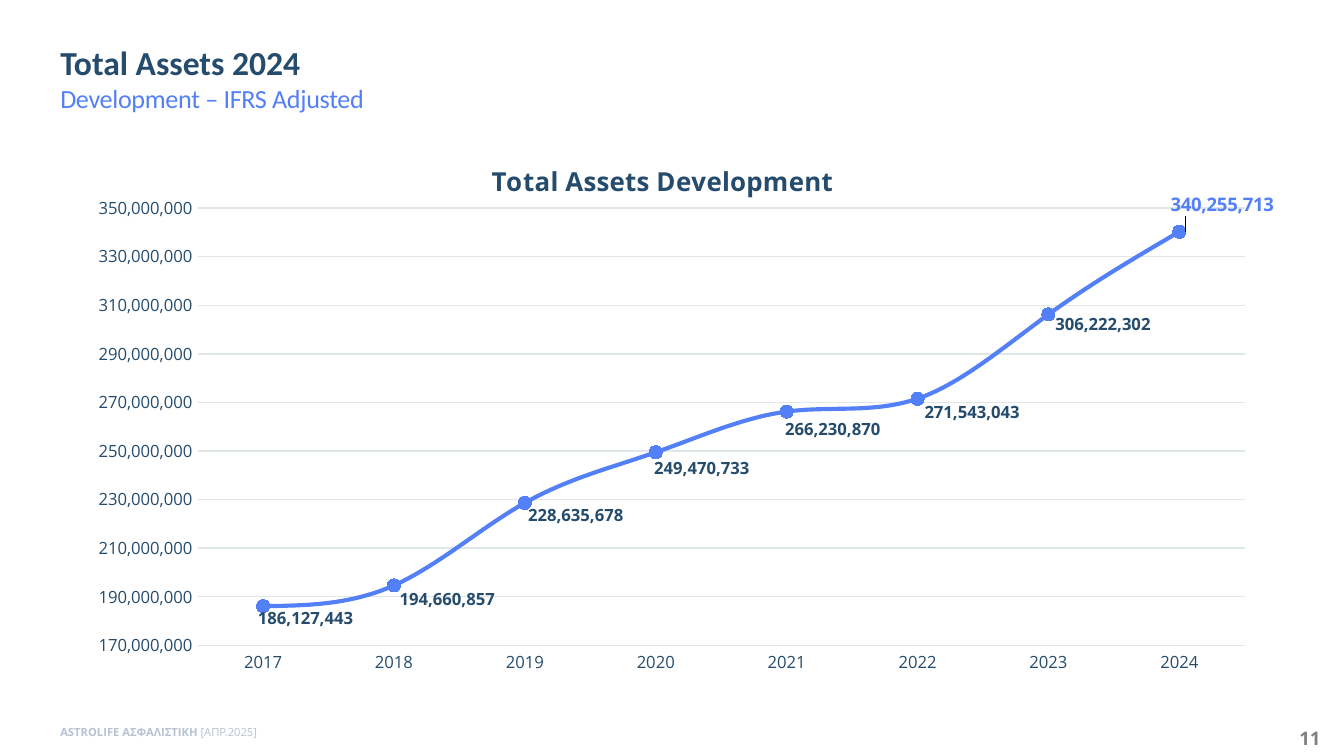
"""Build the total assets slide with its smoothed line chart."""
from lxml.etree import SubElement
from pptx import Presentation
from pptx.chart.data import CategoryChartData
from pptx.dml.color import RGBColor
from pptx.enum.chart import XL_CHART_TYPE, XL_LABEL_POSITION, XL_MARKER_STYLE, XL_TICK_MARK
from pptx.enum.text import MSO_AUTO_SIZE
from pptx.oxml import parse_xml
from pptx.oxml.ns import nsdecls, qn
from pptx.util import Inches, Pt

NAVY = RGBColor(0x25, 0x4C, 0x6D)
BLUE = RGBColor(0x54, 0x80, 0xF7)
GRID = RGBColor(0xE0, 0xE7, 0xEA)
MUTED = RGBColor(0xB8, 0xC2, 0xD2)
GRAY = RGBColor(0x80, 0x80, 0x80)


def set_font(font, name, size, color, bold=False):
    font.name, font.size, font.bold = name, Pt(size), bold
    font.color.rgb = color


def make_layout(modes, **percents):
    layout = parse_xml(f"<c:layout {nsdecls('c')}/>")
    manual = SubElement(layout, qn("c:manualLayout"))
    for key, value in modes.items():
        SubElement(manual, qn(f"c:{key}")).set("val", value)
    for key, value in percents.items():
        SubElement(manual, qn(f"c:{key}")).set("val", str(value / 100))
    return layout


prs = Presentation()
prs.slide_width = Inches(10)
prs.slide_height = prs.slide_width * 9 // 16
s = prs.slides.add_slide(prs.slide_layouts[6])

tf = s.shapes.add_textbox(Inches(0.35), Inches(5.35), Inches(1.68), Inches(0.2)).text_frame
tf.word_wrap = False
tf.auto_size = MSO_AUTO_SIZE.SHAPE_TO_FIT_TEXT
p = tf.paragraphs[0]
for text, bold in [("ASTROLIFE ΑΣΦΑΛΙΣΤΙΚΗ ", True), ("[ΑΠΡ.2025]", False)]:
    r = p.add_run()
    r.text = text
    set_font(r.font, "Open Sans", 6, MUTED, bold)

tf = s.shapes.add_textbox(Inches(9.57), Inches(5.36), Inches(0.36), Inches(0.27)).text_frame
tf.word_wrap = True
p = tf.paragraphs[0]
p.text = "11"
set_font(p.font, "Open Sans", 10, GRAY, True)

assets = {
    "2017": 186127443, "2018": 194660857, "2019": 228635678, "2020": 249470733,
    "2021": 266230870, "2022": 271543043, "2023": 306222302, "2024": 340255713,
}
data = CategoryChartData(number_format="#,##0")
data.categories = list(assets)
data.add_series("Series 1", list(assets.values()))
chart = s.shapes.add_chart(XL_CHART_TYPE.LINE_MARKERS, Inches(0.43), Inches(1.02),
                           Inches(9.06), Inches(4.13), data).chart
set_font(chart.font, "Open Sans", 9, NAVY)
chart.has_legend = False

chart.has_title = True
p = chart.chart_title.text_frame.paragraphs[0]
p.text = "Total Assets Development"
set_font(p.font, "Open Sans", 14, NAVY, True)
edges = {"xMode": "edge", "yMode": "edge"}
title = chart.chart_title._element
for old in title.findall(qn("c:layout")):
    title.remove(old)
title.find(qn("c:tx")).addnext(make_layout(edges, x=35.6, y=3.4))

area = chart._chartSpace.chart.plotArea
for old in area.findall(qn("c:layout")):
    area.remove(old)
area.insert(0, make_layout({"layoutTarget": "inner", **edges}, x=11.6, y=12.8, w=86.85, h=78.8))

cat_axis, val_axis = chart.category_axis, chart.value_axis
for axis in (cat_axis, val_axis):
    axis.major_tick_mark = axis.minor_tick_mark = XL_TICK_MARK.NONE
    set_font(axis.tick_labels.font, "Open Sans", 9, NAVY)
val_axis.minimum_scale, val_axis.maximum_scale = 170000000, 350000000
val_axis.major_unit = 20000000
val_axis.tick_labels.number_format = "#,##0"
val_axis.tick_labels.number_format_is_linked = False
val_axis.format.line.fill.background()
for line in (cat_axis.format.line, val_axis.major_gridlines.format.line):
    line.color.rgb = GRID
    line.width = Pt(0.75)

plot = chart.plots[0]
plot.vary_by_categories = False
series = plot.series[0]
series.smooth = True
series.format.line.color.rgb = BLUE
series.format.line.width = Pt(2.25)
series.marker.style = XL_MARKER_STYLE.CIRCLE
series.marker.size = 7
series.marker.format.fill.solid()
series.marker.format.fill.fore_color.rgb = BLUE
series.marker.format.line.color.rgb = BLUE

labels = series.data_labels
labels.show_value = True
labels.number_format = "#,##0"
labels.number_format_is_linked = False
labels.position = XL_LABEL_POSITION.RIGHT
set_font(labels.font, "Open Sans", 9, NAVY, True)
label_shifts = [(-1.4, 2.2), (-0.5, 2.4), (-0.7, 2.2), (-1.1, 2.9),
                (-1.1, 3.1), (-0.4, 2.4), (-0.4, 1.8), (-1.7, -5)]
for i, (dx, dy) in enumerate(label_shifts):
    last = i == len(label_shifts) - 1
    label = series.points[i].data_label
    set_font(label.font, "Open Sans", 10 if last else 9, BLUE if last else NAVY, True)
    label.position = XL_LABEL_POSITION.RIGHT
    idx = labels._element.findall(qn("c:dLbl"))[i].find(qn("c:idx"))
    idx.addnext(make_layout({}, x=dx, y=dy))
labels._element.append(parse_xml(
    f'<c:extLst {nsdecls("c")}><c:ext uri="{{CE6537A1-D6FC-4f65-9D91-7224C49458BB}}" '
    'xmlns:c15="http://schemas.microsoft.com/office/drawing/2012/chart">'
    '<c15:showLeaderLines val="0"/></c:ext></c:extLst>'))

tf = s.shapes.add_textbox(Inches(0.35), Inches(0.21), Inches(6.69), Inches(0.71)).text_frame
tf.word_wrap = True
tf.margin_top = tf.margin_bottom = Inches(0.1)
p = tf.paragraphs[0]
p.text = "Total Assets 2024"
set_font(p.font, "Calibri", 18, NAVY, True)
p = tf.add_paragraph()
r = p.add_run()
r.text = "Development – IFRS Adjusted"
set_font(p.font, "Calibri", 14, BLUE)
r.font._element.set("spc", "-20")

prs.save("out.pptx")
